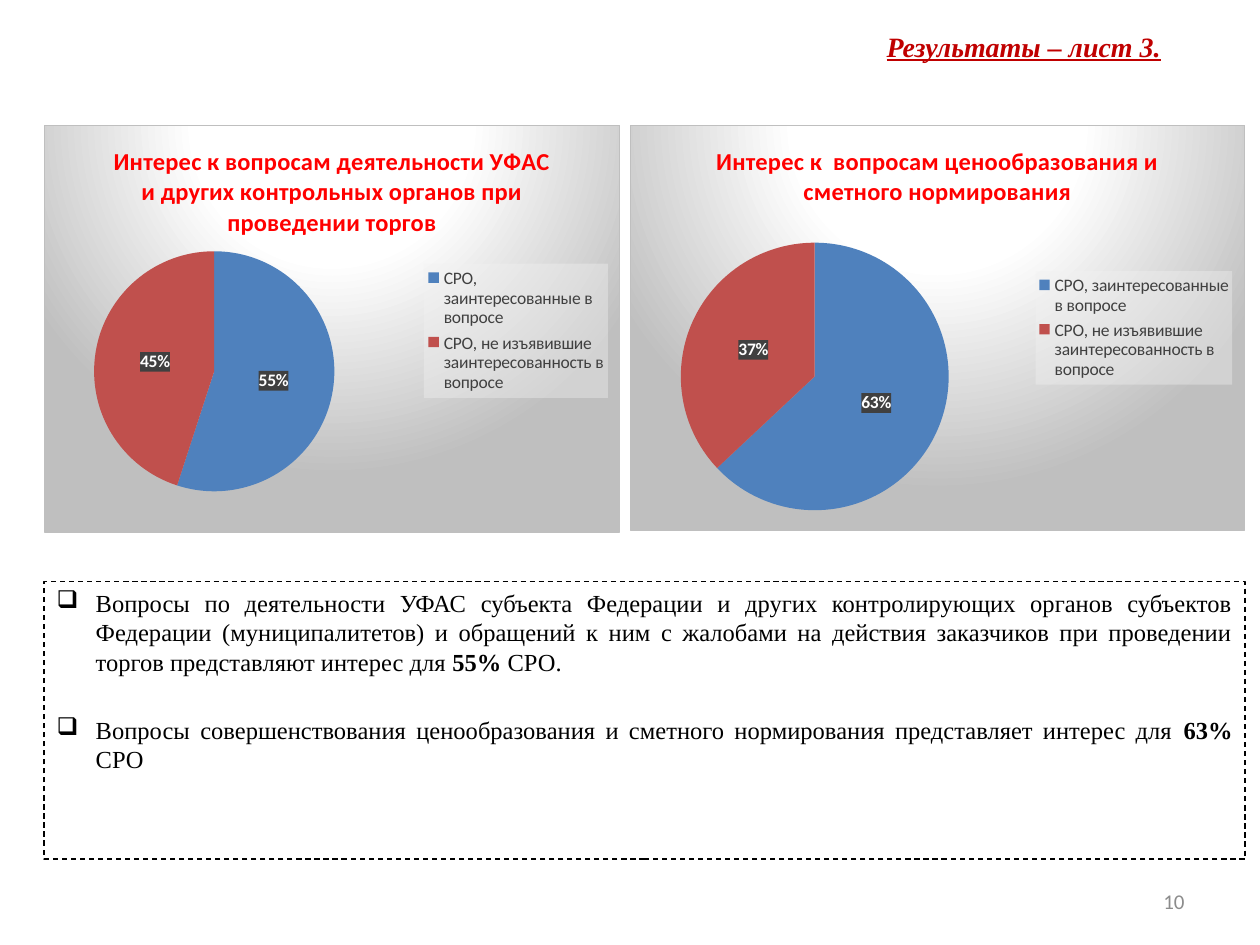
from lxml import etree
from pptx import Presentation
from pptx import util as u
from pptx.chart.data import CategoryChartData
from pptx.dml.color import RGBColor
from pptx.enum import chart as ch, dml, shapes, text
from pptx.oxml import parse_xml

NS = ('xmlns:c="http://schemas.openxmlformats.org/drawingml/2006/chart" '
      'xmlns:a="http://schemas.openxmlformats.org/drawingml/2006/main"')
CHART_FILL = f'''<c:spPr {NS}><a:gradFill><a:gsLst>
<a:gs pos="0"><a:srgbClr val="FFFFFF"/></a:gs>
<a:gs pos="39000"><a:srgbClr val="FFFFFF"/></a:gs>
<a:gs pos="100000"><a:srgbClr val="BFBFBF"/></a:gs></a:gsLst>
<a:path path="circle"><a:fillToRect l="50000" t="-80000" r="50000" b="180000"/></a:path>
</a:gradFill><a:ln w="9525"><a:solidFill><a:srgbClr val="BFBFBF"/></a:solidFill></a:ln></c:spPr>'''
PANEL_FILL = '''<c:spPr {}><a:solidFill><a:srgbClr val="{}"><a:alpha val="{}"/></a:srgbClr>
</a:solidFill><a:ln><a:noFill/></a:ln></c:spPr>'''


def style(font, name, size, color, bold=False):
    font.name, font.size, font.bold = name, u.Pt(size), bold
    font.color.rgb = RGBColor.from_string(color)


def layout(box, target=""):
    """Manual chart layout from (x, y, w, h) as fractions of the chart."""
    sizes = "".join(f'<c:{k} val="{v}"/>' for k, v in zip("xywh", box))
    return parse_xml(f'<c:layout {NS}><c:manualLayout>{target}<c:xMode val="edge"/>'
                     f'<c:yMode val="edge"/>{sizes}</c:manualLayout></c:layout>')


prs = Presentation()
prs.slide_width, prs.slide_height = u.Cm(25.4), u.Cm(19.05)
slide = prs.slides.add_slide(prs.slide_layouts[6])

# Heading and page number
for words, box, font_name, size, color, heading in (
    ("Результаты – лист 3.", (2.06, 0.53, 21.59, 0.79), "Times New Roman", 16, "C00000", True),
    ("10", (18.21, 17.65, 5.92, 1.02), "Calibri", 12, "8C8C8C", False),
):
    frame = slide.shapes.add_textbox(*map(u.Cm, box)).text_frame
    frame.word_wrap = True
    frame.vertical_anchor = text.MSO_ANCHOR.MIDDLE
    line = frame.paragraphs[0]
    line.text = words
    line.alignment = text.PP_ALIGN.RIGHT
    font = line.runs[0].font
    style(font, font_name, size, color, heading)
    font.italic = font.underline = heading

# Pie charts
answers = ("СРО, заинтересованные в вопросе",
           "СРО, не изъявившие заинтересованность в вопросе")
surveys = (
    ("Интерес к вопросам деятельности УФАС и других контрольных органов при проведении торгов",
     (55, 45), (0.89, 2.51, 11.61, 8.23), (0.05, 0.31, 0.49, 0.59), (0.66, 0.34, 0.32, 0.33)),
    ("Интерес к  вопросам ценообразования и сметного нормирования",
     (63, 37), (12.7, 2.51, 12.4, 8.2), (0.08, 0.29, 0.44, 0.66), (0.66, 0.36, 0.32, 0.28)),
)
for question, shares, box, pie_box, legend_box in surveys:
    data = CategoryChartData()
    data.categories = answers
    data.add_series("Series 1", shares)
    chart = slide.shapes.add_chart(ch.XL_CHART_TYPE.PIE, *map(u.Cm, box), data).chart
    style(chart.font, "Calibri", 10, "000000")
    chart._chartSpace.chart.addnext(parse_xml(CHART_FILL))

    title = chart.chart_title
    title.include_in_layout = False
    title.text_frame.text = question
    style(title.text_frame.paragraphs[0].runs[0].font, "Calibri", 14, "FF0000", True)

    chart.has_legend = True
    legend = chart.legend
    legend.position = ch.XL_LEGEND_POSITION.RIGHT
    legend.include_in_layout = False
    style(legend.font, "Calibri", 10, "404040")
    legend_xml = legend._element
    for old in legend_xml.findall("{*}layout"):
        legend_xml.remove(old)
    legend_xml.find("{*}overlay").addprevious(layout(legend_box))
    legend_xml.find("{*}overlay").addnext(parse_xml(PANEL_FILL.format(NS, "F2F2F2", 39000)))

    plot_area = chart._chartSpace.chart.plotArea
    for old in plot_area.findall("{*}layout"):
        plot_area.remove(old)
    plot_area.insert(0, layout(pie_box, '<c:layoutTarget val="inner"/>'))

    pie = chart.plots[0]
    pie.vary_by_categories = True
    for index, color in enumerate(("4F81BD", "C0504D")):
        slice_fill = pie.series[0].points[index].format.fill
        slice_fill.solid()
        slice_fill.fore_color.rgb = RGBColor.from_string(color)
    labels = pie.series[0].data_labels
    labels.show_percentage, labels.show_value = True, False
    labels.number_format, labels.number_format_is_linked = "0%", False
    labels.position = ch.XL_LABEL_POSITION.CENTER
    style(labels.font, "Calibri", 10, "FFFFFF", True)
    labels._element.find("{*}numFmt").addnext(parse_xml(PANEL_FILL.format(NS, "404040", 90000)))

# Conclusions
conclusions = slide.shapes.add_shape(shapes.MSO_SHAPE.RECTANGLE,
                                     *map(u.Cm, (0.89, 11.73, 24.21, 5.59)))
conclusions.shadow.inherit = False
conclusions.fill.background()
conclusions.line.color.rgb = RGBColor.from_string("000000")
conclusions.line.width = u.Pt(0.75)
conclusions.line.dash_style = dml.MSO_LINE.DASH
frame = conclusions.text_frame
frame.word_wrap = True
frame.vertical_anchor = text.MSO_ANCHOR.TOP
findings = (
    (3, ("Вопросы по деятельности УФАС субъекта Федерации и других контролирующих органов "
         "субъектов Федерации (муниципалитетов) и обращений к ним с жалобами на действия "
         "заказчиков при проведении торгов представляют интерес для ", "55%", " СРО.")),
    (22, ("Вопросы совершенствования ценообразования и сметного нормирования представляет "
          "интерес для ", "63%", " СРО")),
)
for index, (gap, parts) in enumerate(findings):
    finding = frame.add_paragraph() if index else frame.paragraphs[0]
    finding.alignment = text.PP_ALIGN.JUSTIFY
    finding.space_before = u.Pt(gap)
    for part in parts:
        run = finding.add_run()
        run.text = part
        style(run.font, "Times New Roman", 14, "000000", part.endswith("%"))
    props = finding._p.get_or_add_pPr()
    props.set("marL", str(u.Cm(0.79)))
    props.set("indent", str(-u.Cm(0.79)))
    bullet = etree.SubElement(props, "{http://schemas.openxmlformats.org/drawingml/2006/main}buChar")
    bullet.set("char", "❑")

prs.save("out.pptx")
